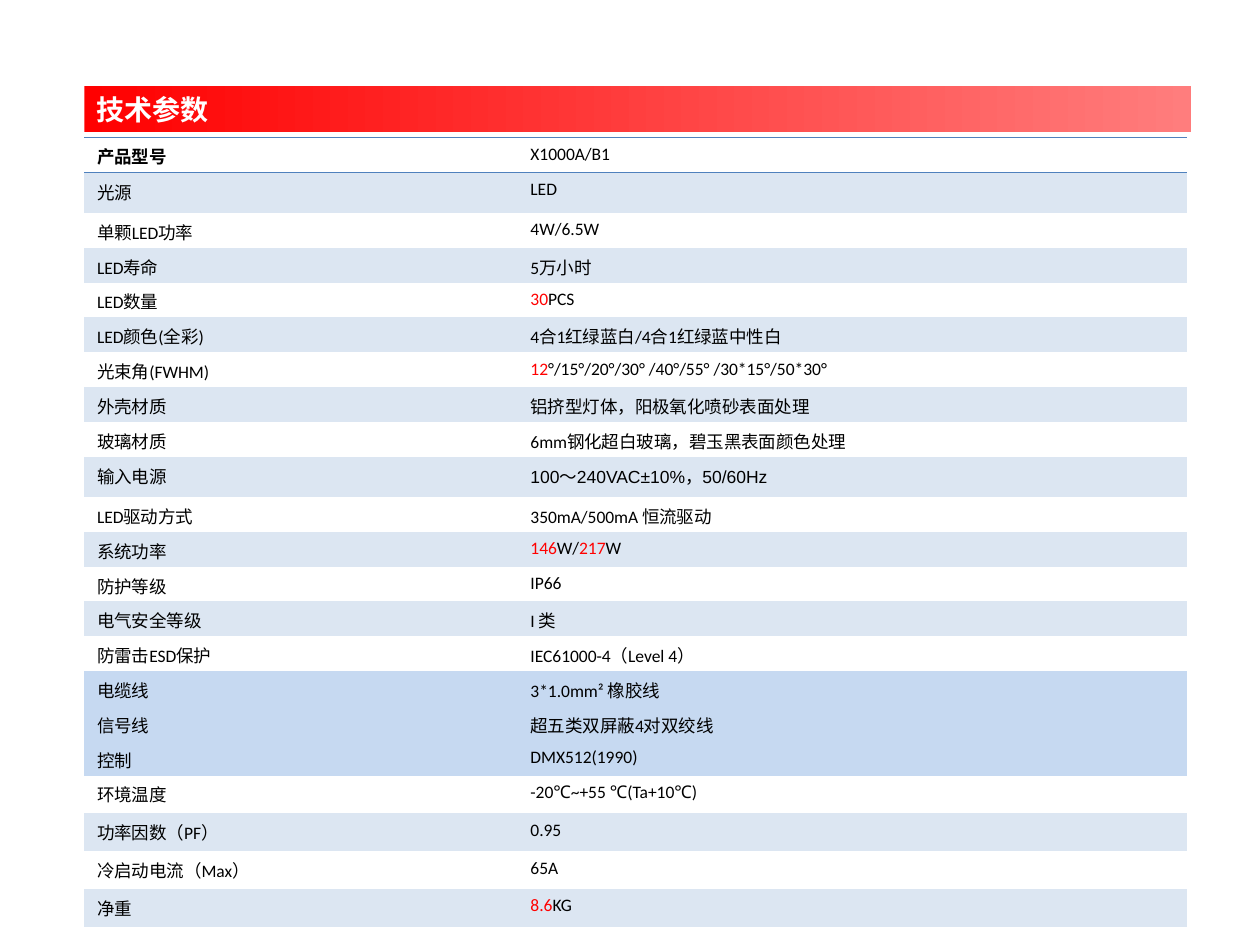
from dataclasses import dataclass

from lxml import etree
from pptx import Presentation
from pptx.dml.color import RGBColor
from pptx.enum.shapes import MSO_SHAPE
from pptx.enum.text import MSO_ANCHOR, PP_ALIGN
from pptx.oxml.ns import qn
from pptx.util import Inches, Pt

RECTANGLE = MSO_SHAPE.RECTANGLE
MIDDLE = MSO_ANCHOR.MIDDLE
LEFT = PP_ALIGN.LEFT
PLAIN_TABLE_STYLE = "{2D5ABB26-0587-4C30-8999-92F81FD0307C}"


@dataclass(frozen=True)
class Theme:
    red: str = "FF0000"
    pale_red: str = "FF7D7D"
    white: str = "FFFFFF"
    black: str = "000000"
    rule: str = "4F81BD"
    band: str = "DCE6F2"
    wiring_band: str = "C6D9F1"
    latin: str = "Calibri"
    cjk: str = "Noto Sans CJK SC"
    power_font: str = "Arial"
    title_size: int = 16
    body_size: int = 10
    rule_width: int = 1


# In a tuple the pieces alternate between highlighted and normal text.
SPECS = [
    ("产品型号", "X1000A/B1"),
    ("光源", "LED"),
    ("单颗LED功率", "4W/6.5W"),
    ("LED寿命", "5万小时"),
    ("LED数量", ("30", "PCS")),
    ("LED颜色(全彩)", "4合1红绿蓝白/4合1红绿蓝中性白"),
    ("光束角(FWHM)", ("12", "°/15°/20°/30° /40°/55° /30*15°/50*30°")),
    ("外壳材质", "铝挤型灯体，阳极氧化喷砂表面处理"),
    ("玻璃材质", "6mm钢化超白玻璃，碧玉黑表面颜色处理"),
    ("输入电源", "100～240VAC±10%，50/60Hz"),
    ("LED驱动方式", "350mA/500mA 恒流驱动"),
    ("系统功率", ("146", "W/", "217", "W")),
    ("防护等级", "IP66"),
    ("电气安全等级", "I 类"),
    ("防雷击ESD保护", "IEC61000-4（Level 4）"),
    ("电缆线", "3*1.0mm² 橡胶线"),
    ("信号线", "超五类双屏蔽4对双绞线"),
    ("控制", "DMX512(1990)"),
    ("环境温度", "-20℃~+55 ℃(Ta+10℃)"),
    ("功率因数（PF）", "0.95"),
    ("冷启动电流（Max）", "65A"),
    ("净重", ("8.6", "KG")),
]
WIRING = ("电缆线", "信号线", "控制")
POWER_INPUT = "输入电源"
TABLE_HEIGHT = 6.27
COLUMN_WIDTHS = (3.44, 5.31)
SPECIAL_HEIGHTS = {0: 0.28, 1: 0.32, 9: 0.32, 18: 0.3, 19: 0.3, 20: 0.3, 21: 0.3}
RULED_SIDES = {0: "TB", 1: "T"}


def row_heights():
    """Share the height left by the special rows equally among the others."""
    shared = TABLE_HEIGHT - sum(SPECIAL_HEIGHTS.values())
    standard = shared / (len(SPECS) - len(SPECIAL_HEIGHTS))
    return [SPECIAL_HEIGHTS.get(row, standard) for row in range(len(SPECS))]


class SlideBuilder:
    def __init__(self, slide, theme):
        self.slide = slide
        self.theme = theme

    def style_text(self, paragraph, size, color, latin, bold=False):
        font = paragraph.font
        font.size = Pt(size)
        font.bold = bold
        font.name = latin
        font.color.rgb = RGBColor.from_string(color)
        defaults = paragraph._p.pPr.find(qn("a:defRPr"))
        etree.SubElement(defaults, qn("a:ea"), typeface=self.theme.cjk)

    def title_bar(self, text, left, top, width, height):
        theme = self.theme
        bar = self.slide.shapes.add_shape(
            RECTANGLE, Inches(left), Inches(top), Inches(width), Inches(height))
        bar.shadow.inherit = False
        bar.line.fill.background()
        bar.fill.gradient()
        bar.fill.gradient_angle = 0
        for stop, color in zip(bar.fill.gradient_stops, (theme.red, theme.pale_red)):
            stop.color.rgb = RGBColor.from_string(color)
        frame = bar.text_frame
        frame.vertical_anchor = MIDDLE
        frame.word_wrap = True
        heading = frame.paragraphs[0]
        heading.text = text
        heading.alignment = LEFT
        self.style_text(heading, theme.title_size, theme.white, theme.cjk, bold=True)

    def cell_text(self, cell, content, latin, bold):
        cell.margin_bottom = 0
        paragraph = cell.text_frame.paragraphs[0]
        pieces = (content,) if isinstance(content, str) else content
        for index, piece in enumerate(pieces):
            run = paragraph.add_run()
            run.text = piece
            if len(pieces) > 1 and index % 2 == 0:
                run.font.color.rgb = RGBColor.from_string(self.theme.red)
        self.style_text(paragraph, self.theme.body_size, self.theme.black, latin, bold)

    def cell_borders(self, cell, ruled_sides):
        """Rule the named sides and clear the others; call before cell_fill."""
        properties = cell._tc.get_or_add_tcPr()
        for side in "LRTB":
            line = etree.SubElement(properties, qn(f"a:ln{side}"))
            if side not in ruled_sides:
                etree.SubElement(line, qn("a:noFill"))
                continue
            line.set("w", str(Pt(self.theme.rule_width)))
            line.set("cmpd", "sng")
            fill = etree.SubElement(line, qn("a:solidFill"))
            etree.SubElement(fill, qn("a:srgbClr"), val=self.theme.rule)
            etree.SubElement(line, qn("a:prstDash"), val="solid")

    def cell_fill(self, cell, row, label):
        if label in WIRING:
            color = self.theme.wiring_band
        elif row % 2:
            color = self.theme.band
        else:
            cell.fill.background()
            return
        cell.fill.solid()
        cell.fill.fore_color.rgb = RGBColor.from_string(color)

    def spec_table(self, specs, left, top):
        table = self.slide.shapes.add_table(
            len(specs), len(COLUMN_WIDTHS), Inches(left), Inches(top),
            Inches(sum(COLUMN_WIDTHS)), Inches(TABLE_HEIGHT)).table
        table.first_row = table.horz_banding = False
        table._tbl.tblPr.find(qn("a:tableStyleId")).text = PLAIN_TABLE_STYLE
        for column, width in zip(table.columns, COLUMN_WIDTHS):
            column.width = Inches(width)
        for row, (spec, height) in enumerate(zip(specs, row_heights())):
            table.rows[row].height = Inches(height)
            label = spec[0]
            for column, content in enumerate(spec):
                cell = table.cell(row, column)
                is_power_value = label == POWER_INPUT and column == 1
                latin = self.theme.power_font if is_power_value else self.theme.latin
                self.cell_text(cell, content, latin, bold=row == 0 and column == 0)
                self.cell_borders(cell, RULED_SIDES.get(row, ""))
                self.cell_fill(cell, row, label)


def main():
    presentation = Presentation()
    presentation.slide_width = Inches(10)
    presentation.slide_height = Inches(7.5)
    slide = presentation.slides.add_slide(presentation.slide_layouts[6])
    builder = SlideBuilder(slide, Theme())
    builder.title_bar("技术参数", 0.67, 0.68, 8.78, 0.37)
    builder.spec_table(SPECS, 0.67, 1.09)
    presentation.save("out.pptx")


if __name__ == "__main__":
    main()
